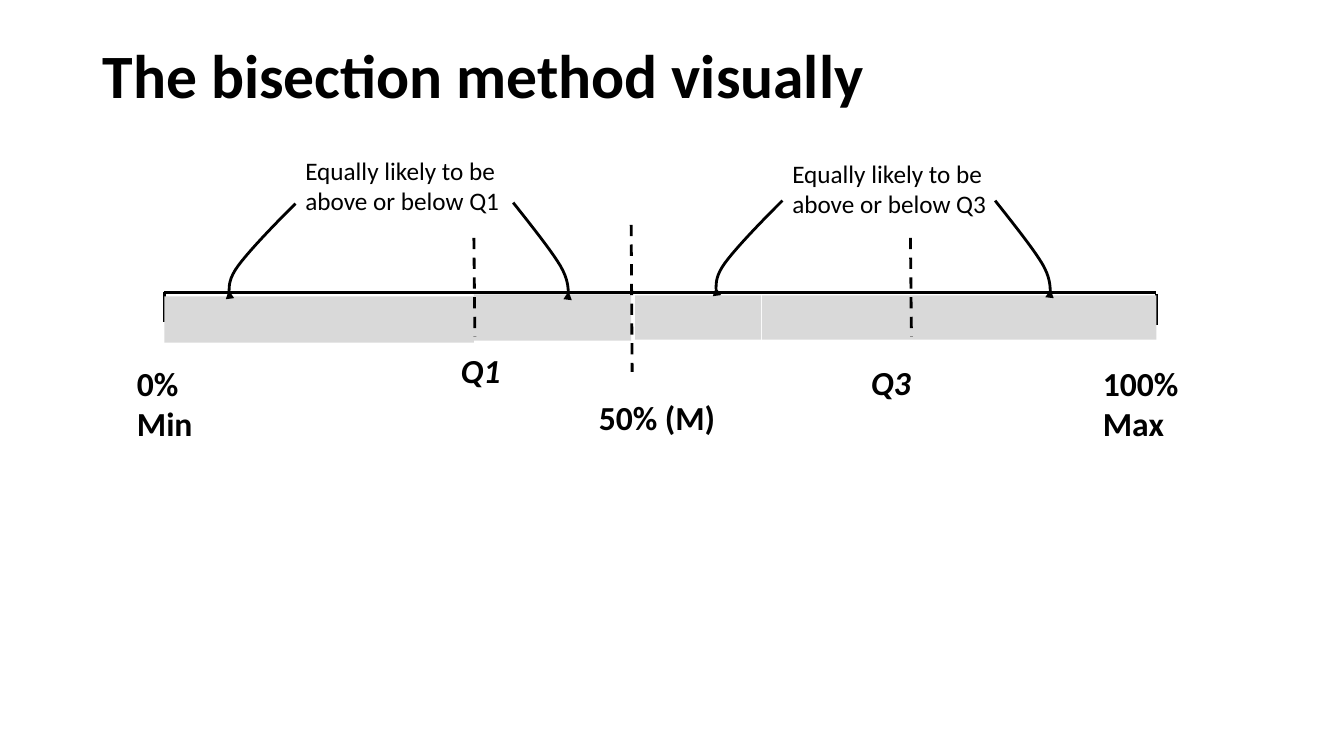
from pptx import Presentation, util as u
from pptx.dml.color import RGBColor
from pptx.enum import dml, shapes, text
from pptx.oxml.ns import qn
from lxml import etree

theme = {
    "font": "Calibri",
    "ink": RGBColor(0, 0, 0),
    "bar": RGBColor(0xD9, 0xD9, 0xD9),
    "title": u.Pt(44),
    "label": u.Pt(24),
    "note": u.Pt(18),
    "stroke": u.Pt(2),
}

deck = Presentation()
deck.slide_width, deck.slide_height = u.Inches(13.33), u.Inches(7.5)
column, row = deck.slide_width / 13.33, deck.slide_height / 7.5
page = deck.slides.add_slide(deck.slide_layouts[5])


def on_grid(*lengths):
    return [round(length * (row if index % 2 else column)) for index, length in enumerate(lengths)]


def style_text(box, size, bold=False, italic=False):
    for para in box.text_frame.paragraphs:
        para.alignment = text.PP_ALIGN.LEFT
        for span in para.runs:
            span.font.name = theme["font"]
            span.font.size = size
            span.font.bold = bold
            span.font.italic = italic
            span.font.color.rgb = theme["ink"]


title = page.shapes.title
title.left, title.top, title.width, title.height = on_grid(0.92, 0.4, 11.5, 1.45)
title.text_frame.text = "The bisection method visually"
title.text_frame.auto_size = text.MSO_AUTO_SIZE.NONE
title.text_frame.vertical_anchor = text.MSO_ANCHOR.TOP
title.text_frame.paragraphs[0].line_spacing = 0.9
style_text(title, theme["title"], bold=True)

scale_left, scale_right, scale_top = 1.63, 11.47, 2.9
quartile_1, median, quartile_3 = 4.7, 6.26, 9.03
scale_lines = [
    (scale_left, scale_top, scale_right, scale_top),
    (scale_left, scale_top, scale_left, 3.19),
    (scale_right, 2.92, scale_right, 3.22),
]
divider_lines = [
    (median, 2.23, median + 0.01, 3.69),
    (quartile_1, 2.36, quartile_1 + 0.01, 3.34),
    (quartile_3, 2.36, quartile_3 + 0.01, 3.34),
]
for ends in scale_lines + divider_lines:
    line = page.shapes.add_connector(shapes.MSO_CONNECTOR.STRAIGHT, *on_grid(*ends))
    line.line.color.rgb = theme["ink"]
    line.line.width = theme["stroke"]
    if ends in divider_lines:
        line.line.dash_style = dml.MSO_LINE.DASH
    etree.SubElement(line._element.spPr, qn("a:effectLst"))

bar_parts = [
    (scale_left, 2.94, quartile_1 - scale_left, 0.46),
    (quartile_1, 2.92, median - quartile_1, 0.46),
    (6.3, 2.93, 1.25, 0.44),
    (7.56, 2.93, scale_right - 7.56, 0.44),
]
for place in bar_parts:
    part = page.shapes.add_shape(shapes.MSO_SHAPE.RECTANGLE, *on_grid(*place))
    part.shadow.inherit = False
    part.fill.solid()
    part.fill.fore_color.rgb = theme["bar"]
    part.line.fill.background()
    page.shapes._spTree.remove(part._element)
    page.shapes._spTree.insert(len(page.shapes._spTree) - len(divider_lines), part._element)

labels = [
    ("0%\nMin", (1.26, 3.55, 1, 0.91), "label", True, False),
    ("100%\nMax", (10.84, 3.55, 1.2, 0.91), "label", True, False),
    ("50% (M)", (5.84, 3.89, 1.69, 0.5), "label", True, False),
    ("Q1", (4.47, 3.42, 1, 0.5), "label", True, True),
    ("Q3", (8.54, 3.54, 1, 0.5), "label", True, True),
    ("Equally likely to be above or below Q1", (2.93, 1.49, 2.16, 0.71), "note", False, False),
    ("Equally likely to be above or below Q3", (7.76, 1.52, 2.16, 0.71), "note", False, False),
]
for wording, place, size, bold, italic in labels:
    box = page.shapes.add_textbox(*on_grid(*place))
    box.text_frame.word_wrap = True
    box.text_frame.auto_size = text.MSO_AUTO_SIZE.SHAPE_TO_FIT_TEXT
    box.text_frame.text = wording
    style_text(box, theme[size], bold, italic)

left_bend = [(0, 0), (-0.23, 0.23), (-0.46, 0.47), (-0.57, 0.62), (-0.68, 0.77),
             (-0.65, 0.85), (-0.66, 0.89), (-0.68, 0.93), (-0.67, 0.89), (-0.66, 0.86)]
right_bend = [(0, 0), (0.19, 0.24), (0.38, 0.48), (0.47, 0.63), (0.56, 0.79),
              (0.54, 0.87), (0.55, 0.91), (0.56, 0.95), (0.56, 0.92), (0.55, 0.88)]
arrows = [(2.93, 2.02, left_bend), (5.09, 2.01, right_bend),
          (7.76, 1.99, left_bend), (9.87, 1.99, right_bend)]
steps = 10
for start_x, start_y, bend in arrows:
    points = []
    for first in range(0, len(bend) - 1, 3):
        for step in range(1, steps + 1):
            t = step / steps
            weights = ((1 - t) ** 3, 3 * t * (1 - t) ** 2, 3 * t * t * (1 - t), t ** 3)
            controls = bend[first:first + 4]
            across = sum(weight * control[0] for weight, control in zip(weights, controls))
            down = sum(weight * control[1] for weight, control in zip(weights, controls))
            points.append(on_grid(start_x + across, start_y + down))
    builder = page.shapes.build_freeform(*on_grid(start_x, start_y))
    builder.add_line_segments(points, close=False)
    arrow = builder.convert_to_shape()
    arrow.shadow.inherit = False
    arrow.fill.background()
    arrow.line.color.rgb = theme["ink"]
    arrow.line.width = theme["stroke"]
    etree.SubElement(arrow.line._get_or_add_ln(), qn("a:tailEnd"), type="triangle")

deck.save("out.pptx")
